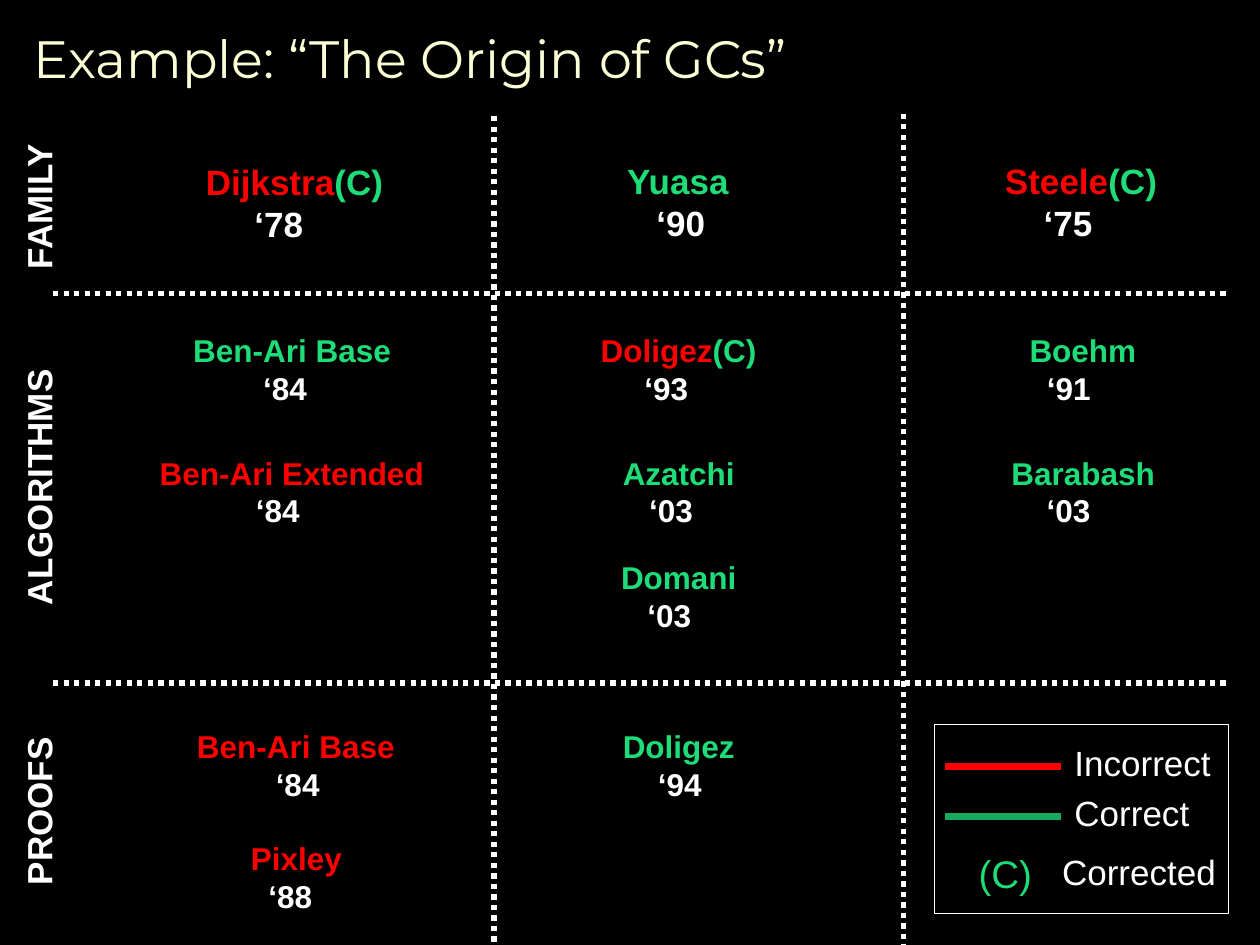
"""Build a slide that sorts garbage collectors by family, algorithm and proof."""
import pptx
import pptx.dml.color
import pptx.enum.dml
import pptx.enum.shapes
import pptx.enum.text
import pptx.oxml.ns
import pptx.util
from lxml import etree

Cm = pptx.util.Cm
WHITE, RED, GREEN, DARK_GREEN, CREAM = "FFFFFF", "FF0000", "1EDC78", "17A95D", "FCFFD5"
CORRECTED = ("(C)", GREEN)
COLUMN_CENTERS = (5.98, 13.69, 21.84)
ROW_LABEL_CENTER = 0.77
FAMILY_FORMAT = {"size": pptx.util.Pt(20), "bold": True, "name": "Arial"}
ENTRY_FORMAT = {"size": pptx.util.Pt(18), "bold": True, "name": "Arial"}
LEGEND_FORMAT = {"size": pptx.util.Pt(20), "bold": False, "name": "Arial"}
SYMBOL_FORMAT = {"size": pptx.util.Pt(22), "bold": False, "name": "Arial"}
TITLE_FORMAT = {"size": pptx.util.Pt(30), "bold": False, "name": "Montserrat"}
LABEL_FRAME = {"word_wrap": False, "auto_size": pptx.enum.text.MSO_AUTO_SIZE.SHAPE_TO_FIT_TEXT}
TITLE_FRAME = {
    "word_wrap": True,
    "auto_size": pptx.enum.text.MSO_AUTO_SIZE.NONE,
    "vertical_anchor": pptx.enum.text.MSO_ANCHOR.MIDDLE,
}

FAMILIES = (
    (0, 3.12, 4.16, [("Dijkstra", RED), CORRECTED], "‘78", 0.98),
    (1, 3.1, 2.59, [("Yuasa", GREEN)], "‘90", 0.59),
    (2, 3.1, 3.66, [("Steele", RED), CORRECTED], "‘75", 0.78),
)
ENTRIES = (
    (0, 6.55, 4.67, [("Ben-Ari Base", GREEN)], "‘84", 1.41),
    (0, 9.02, 6.02, [("Ben-Ari Extended", RED)], "‘84", 1.94),
    (1, 6.55, 3.66, [("Doligez", RED), CORRECTED], "‘93", 0.88),
    (1, 9.02, 2.77, [("Azatchi", GREEN)], "‘03", 0.53),
    (1, 11.13, 2.84, [("Domani", GREEN)], "‘03", 0.53),
    (2, 6.55, 2.67, [("Boehm", GREEN)], "‘91", 0.35),
    (2, 9.02, 3.4, [("Barabash", GREEN)], "‘03", 0.71),
    (0, 14.53, 4.52, [("Ben-Ari Base", RED)], "‘84", 1.59),
    (0, 16.79, 2.34, [("Pixley", RED)], "‘88", 0.35),
    (1, 14.53, 2.77, [("Doligez", GREEN)], "‘94", 0.71),
)
ROW_LABELS = (("FAMILY", 4.1, 3.15), ("ALGORITHMS", 9.82, 5.26), ("PROOFS", 16.34, 3.51))
DIVIDERS = (
    (9.96, 2.34, 9.96, 19.05),
    (18.21, 2.29, 18.21, 19.05),
    (1.07, 5.92, 24.77, 5.92),
    (1.07, 13.77, 24.77, 13.77),
)


def color(hex_string):
    return pptx.dml.color.RGBColor.from_string(hex_string)


def set_attributes(target, values):
    for attribute, value in values.items():
        setattr(target, attribute, value)


def add_run(paragraph, text, hex_string, font_format):
    run = paragraph.add_run()
    run.text = text
    run.font.color.rgb = color(hex_string)
    set_attributes(run.font, font_format)


def add_text(shapes, left, top, width, height, runs, font_format, frame_format=LABEL_FRAME):
    shape = shapes.add_textbox(Cm(left), Cm(top), Cm(width), Cm(height))
    set_attributes(shape.text_frame, frame_format)
    for text, hex_string in runs:
        add_run(shape.text_frame.paragraphs[0], text, hex_string, font_format)
    return shape


def add_entry(shapes, entry, height, font_format):
    column, top, width, name_runs, year, indent = entry
    left = COLUMN_CENTERS[column] - width / 2
    shape = add_text(shapes, left, top, width, height, name_runs, font_format)
    paragraph = shape.text_frame.add_paragraph()
    properties = paragraph._p.get_or_add_pPr()
    properties.set("marL", str(Cm(indent)))
    properties.set("indent", "0")
    add_run(paragraph, year, WHITE, font_format)


def add_row_label(shapes, text, center, width):
    height = 1.09
    left, top = ROW_LABEL_CENTER - width / 2, center - height / 2
    shape = add_text(shapes, left, top, width, height, [(text, WHITE)], FAMILY_FORMAT)
    shape.rotation = 270


def add_line(shapes, ends, hex_string, width, dash=None):
    connector = shapes.add_connector(
        pptx.enum.shapes.MSO_CONNECTOR.STRAIGHT, *(Cm(value) for value in ends))
    connector.line.color.rgb = color(hex_string)
    connector.line.width = pptx.util.Pt(width)
    connector.line.dash_style = dash
    etree.SubElement(connector._element.spPr, pptx.oxml.ns.qn("a:effectLst"))


def add_legend(slide):
    shapes = slide.shapes.add_group_shape().shapes
    frame = shapes.add_shape(
        pptx.enum.shapes.MSO_SHAPE.RECTANGLE, Cm(18.84), Cm(14.61), Cm(5.93), Cm(3.81))
    frame.shadow.inherit = False
    frame.fill.background()
    frame.line.color.rgb = color(WHITE)
    frame.line.width = pptx.util.Pt(0.75)
    for y, hex_string in ((15.45, RED), (16.46, DARK_GREEN)):
        add_line(shapes, (19.05, y, 21.38, y), hex_string, 4)
    for text, left, top, width in (
            ("Incorrect", 21.41, 14.83, 3.28),
            ("Correct", 21.41, 15.83, 2.85),
            ("Corrected", 21.16, 17.02, 3.7)):
        add_text(shapes, left, top, width, 1.09, [(text, WHITE)], LEGEND_FORMAT)
    add_text(shapes, 19.48, 17.02, 1.6, 1.19, [CORRECTED], SYMBOL_FORMAT)


def main():
    presentation = pptx.Presentation()
    presentation.slide_width, presentation.slide_height = Cm(25.4), Cm(19.05)
    slide = presentation.slides.add_slide(presentation.slide_layouts[6])
    slide.background.fill.solid()
    slide.background.fill.fore_color.rgb = color("000000")

    add_text(slide.shapes, 0.43, 0.2, 24.77, 1.91,
             [("Example: “The Origin of GCs”", CREAM)], TITLE_FORMAT, TITLE_FRAME)
    for ends in DIVIDERS:
        add_line(slide.shapes, ends, WHITE, 3, pptx.enum.dml.MSO_LINE.ROUND_DOT)
    for label in ROW_LABELS:
        add_row_label(slide.shapes, *label)
    for entry in FAMILIES:
        add_entry(slide.shapes, entry, 1.96, FAMILY_FORMAT)
    for entry in ENTRIES:
        add_entry(slide.shapes, entry, 1.78, ENTRY_FORMAT)
    add_legend(slide)
    presentation.save("out.pptx")


if __name__ == "__main__":
    main()
